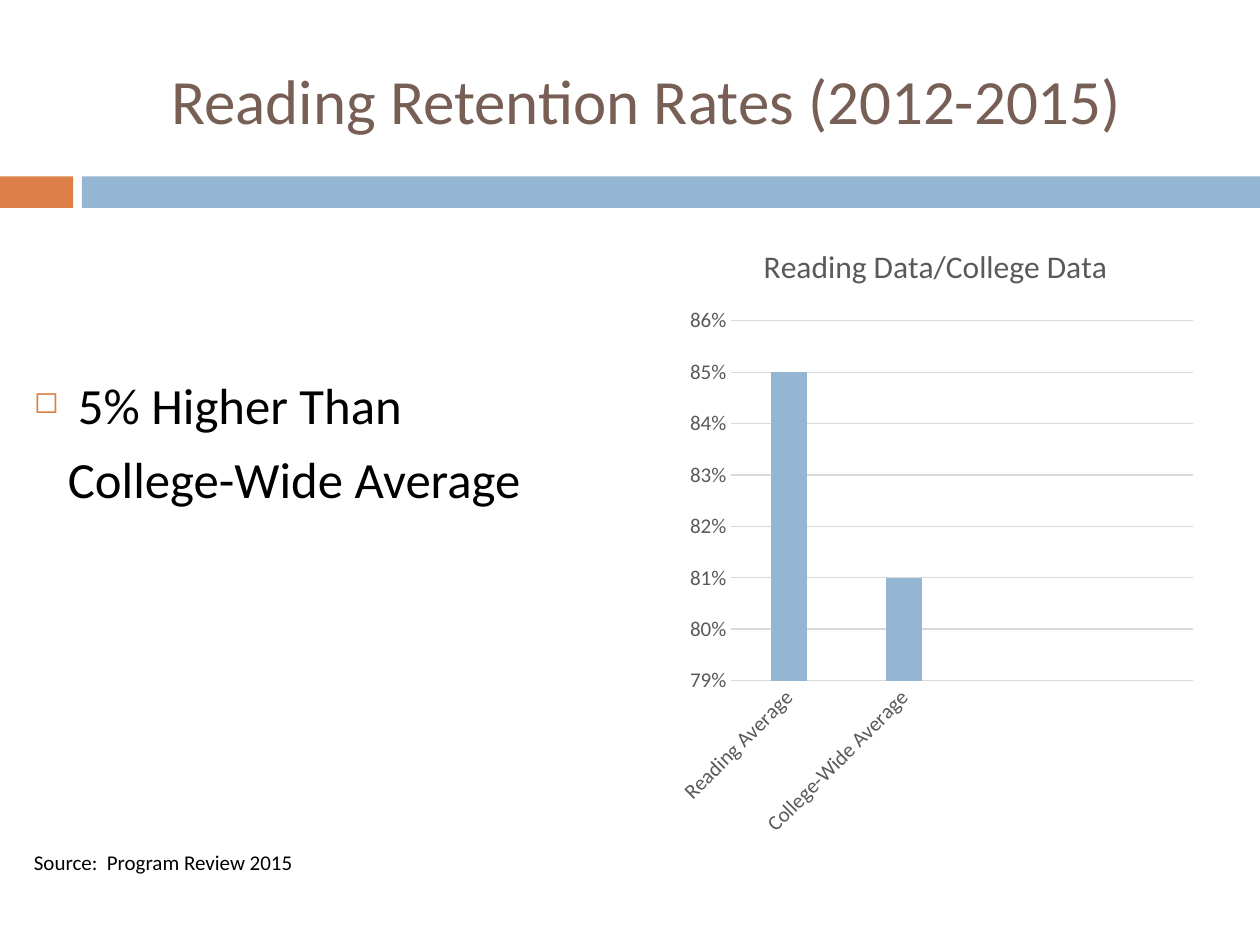
from lxml.etree import SubElement
from pptx import Presentation
from pptx.chart.data import CategoryChartData
from pptx.dml.color import RGBColor
from pptx.enum.chart import XL_CHART_TYPE, XL_TICK_MARK
from pptx.enum.shapes import MSO_SHAPE
from pptx.enum.text import MSO_ANCHOR, PP_ALIGN
from pptx.oxml.ns import qn
from pptx.util import Inches, Pt

COLORS = {
    "orange": "DD8047",
    "blue": "94B6D2",
    "brown": "775F55",
    "black": "000000",
    "gray": "595959",
    "grid": "D9D9D9",
}
FONT = "Calibri"


def rgb(name):
    return RGBColor.from_string(COLORS[name])


def write(para, text, size, color="black", align=PP_ALIGN.LEFT, before=0):
    para.alignment = align
    para.space_before = Pt(before)
    span = para.add_run()
    span.text = text
    span.font.size = Pt(size)
    span.font.name = FONT
    span.font.color.rgb = rgb(color)


deck = Presentation()
deck.slide_width, deck.slide_height = Inches(10), Inches(7.5)
slide = deck.slides.add_slide(deck.slide_layouts[5])

# Band under the title
for left, width, color in [(0, 0.58, "orange"), (0.65, 9.35, "blue")]:
    bar = slide.shapes.add_shape(
        MSO_SHAPE.RECTANGLE, Inches(left), Inches(1.4), Inches(width), Inches(0.25))
    bar.shadow.inherit = False
    bar.fill.solid()
    bar.fill.fore_color.rgb = rgb(color)
    bar.line.fill.background()

title = slide.shapes.title
title.left, title.top = Inches(0.67), Inches(0.25)
title.width, title.height = Inches(8.92), Inches(1.08)
title.text_frame.vertical_anchor = MSO_ANCHOR.MIDDLE
write(title.text_frame.paragraphs[0], "Reading Retention Rates (2012-2015)", 36,
      color="brown", align=PP_ALIGN.CENTER)

# Finding and source
frames = []
for top, height in [(2.97, 1.1), (6.74, 0.25)]:
    box = slide.shapes.add_textbox(Inches(0.17), Inches(top), Inches(4.75), Inches(height))
    frame = box.text_frame
    frame.word_wrap = True
    frame.margin_top = frame.margin_bottom = 0
    frames.append(frame)
finding, source = frames

bullet_para = finding.paragraphs[0]
write(bullet_para, "5% Higher Than", 29)
bullet = bullet_para._p.get_or_add_pPr()
bullet.set("marL", str(Inches(0.35)))
bullet.set("indent", str(-Inches(0.35)))
bullet_color = SubElement(bullet, qn("a:buClr"))
SubElement(bullet_color, qn("a:srgbClr"), val=COLORS["orange"])
SubElement(bullet, qn("a:buSzPct"), val="60000")
SubElement(bullet, qn("a:buChar"), char="◻")

second_line = finding.add_paragraph()
write(second_line, "College-Wide Average", 29, before=7)
second_line._p.get_or_add_pPr().set("marL", str(Inches(0.27)))

write(source.paragraphs[0], "Source:  Program Review 2015", 12)

# Chart with two unused category slots on the right
data = CategoryChartData(number_format="0%")
data.categories = ["Reading Average", "College-Wide Average", "", ""]
data.add_series("Series 1", [0.85, 0.81, None, None])
chart = slide.shapes.add_chart(
    XL_CHART_TYPE.COLUMN_CLUSTERED, Inches(5.3), Inches(1.74),
    Inches(4.25), Inches(5), data).chart
chart.has_legend = False
chart.font.name = FONT
chart.font.size = Pt(12)
chart.font.color.rgb = rgb("gray")
chart.has_title = True
write(chart.chart_title.text_frame.paragraphs[0], "Reading Data/College Data", 18,
      color="gray", align=PP_ALIGN.CENTER)
chart.chart_title.text_frame.paragraphs[0].runs[0].font.bold = False
chart.chart_title.include_in_layout = False

plot = chart.plots[0]
plot.gap_width = 219
plot.overlap = -27
plot.vary_by_categories = False
columns = plot.series[0]
columns.format.fill.solid()
columns.format.fill.fore_color.rgb = rgb("blue")

for axis in (chart.category_axis, chart.value_axis):
    axis.major_tick_mark = axis.minor_tick_mark = XL_TICK_MARK.NONE
    axis.tick_labels.font.name = FONT
    axis.tick_labels.font.size = Pt(12)
    axis.tick_labels.font.color.rgb = rgb("gray")

chart.category_axis._element.find(qn("c:txPr")).find(qn("a:bodyPr")).set("rot", "-2700000")
values = chart.value_axis
values.minimum_scale, values.maximum_scale, values.major_unit = 0.79, 0.86, 0.01
values.tick_labels.number_format = "0%"
values.tick_labels.number_format_is_linked = False
values.format.line.fill.background()
for line in (chart.category_axis.format.line, values.major_gridlines.format.line):
    line.color.rgb = rgb("grid")
    line.width = Pt(0.75)

deck.save("out.pptx")
